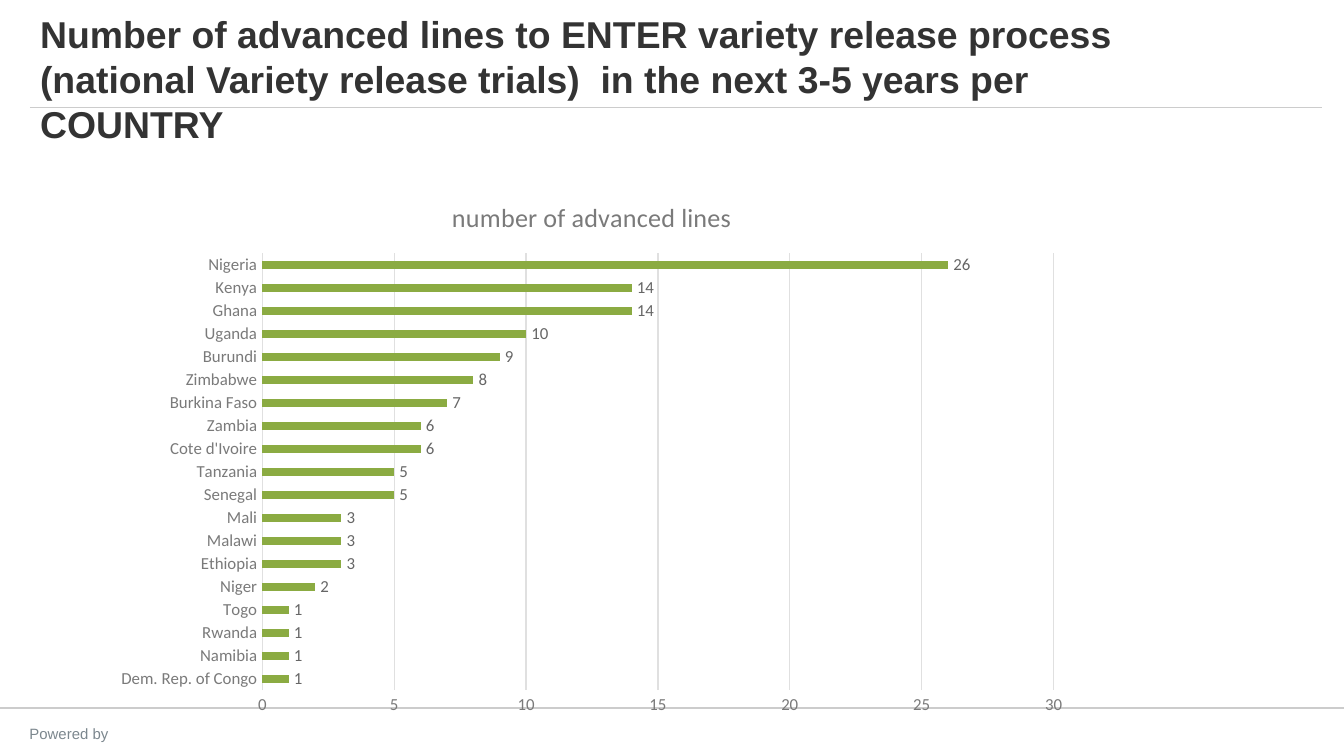
from lxml.etree import SubElement
from pptx import Presentation
from pptx.chart.data import CategoryChartData as Data
from pptx.dml.color import RGBColor
from pptx.enum.chart import XL_CHART_TYPE as Kind
from pptx.enum.chart import XL_LABEL_POSITION as Spot
from pptx.enum.chart import XL_TICK_MARK as Tick
from pptx.enum.shapes import MSO_CONNECTOR as Link
from pptx.enum.text import MSO_ANCHOR as Anchor
from pptx.enum.text import PP_ALIGN as Align
from pptx.oxml.ns import qn
from pptx.util import Pt

INK = RGBColor(0x33, 0x33, 0x33)
GRAY = RGBColor(0x7A, 0x7A, 0x7A)
LABEL = RGBColor(0x66, 0x66, 0x66)
SLATE = RGBColor(0x7C, 0x87, 0x8E)
RULE = RGBColor(0xCC, 0xCC, 0xCC)
GRID = RGBColor(0xE0, 0xE0, 0xE0)
GREEN = RGBColor(0x8B, 0xAB, 0x42)

WIDE, HIGH = 720, 405
TITLE = ("Number of advanced lines to ENTER variety release process "
         "(national Variety release trials)  in the next 3-5 years per COUNTRY")
LINES = {
    "Dem. Rep. of Congo": 1, "Namibia": 1, "Rwanda": 1, "Togo": 1,
    "Niger": 2, "Ethiopia": 3, "Malawi": 3, "Mali": 3, "Senegal": 5,
    "Tanzania": 5, "Cote d'Ivoire": 6, "Zambia": 6, "Burkina Faso": 7,
    "Zimbabwe": 8, "Burundi": 9, "Uganda": 10, "Ghana": 14, "Kenya": 14,
    "Nigeria": 26,
}


def style(font, size, color, name="Calibri", bold=False):
    font.name, font.size, font.bold = name, Pt(size), bold
    font.color.rgb = color


def stroke(line, color, width):
    line.color.rgb = color
    line.width = Pt(width)


class Page:
    """Holds the current slide and its text style."""

    def __init__(self, slide, face="Arial"):
        self.slide = slide
        self.face = face

    def rule(self, left, right, y, width):
        line = self.slide.shapes.add_connector(
            Link.STRAIGHT, Pt(left), Pt(y), Pt(right), Pt(y))
        stroke(line.line, RULE, width)
        SubElement(line._element.spPr, qn("a:effectLst"))

    def text(self, text, box, size=20, color=INK, bold=False,
             align=Align.LEFT, anchor=Anchor.TOP, right=7.2):
        frame = self.slide.shapes.add_textbox(*map(Pt, box)).text_frame
        frame.word_wrap = True
        frame.vertical_anchor = anchor
        frame.margin_right = Pt(right)
        para = frame.paragraphs[0]
        para.alignment = align
        run = para.add_run()
        run.text = text
        style(run.font, size, color, self.face, bold)

    def bars(self, name, values, box, top, step):
        data = Data()
        data.categories = list(values)
        data.add_series(name, list(values.values()))
        chart = self.slide.shapes.add_chart(
            Kind.BAR_CLUSTERED, *map(Pt, box), data).chart
        style(chart.font, 10, INK)
        chart.has_legend = False
        chart.has_title = True
        head = chart.chart_title.text_frame
        head.text = name
        style(head.paragraphs[0].runs[0].font, 14, GRAY)

        cats, vals = chart.category_axis, chart.value_axis
        for axis in (cats, vals):
            axis.major_tick_mark = axis.minor_tick_mark = Tick.NONE
            style(axis.tick_labels.font, 9, GRAY)
        stroke(cats.format.line, GRID, 0.75)
        vals.format.line.fill.background()
        stroke(vals.major_gridlines.format.line, GRID, 0.75)
        vals.minimum_scale, vals.maximum_scale = 0, top
        vals.major_unit = step

        plot = chart.plots[0]
        plot.gap_width = 182
        plot.vary_by_categories = False
        fill = plot.series[0].format.fill
        fill.solid()
        fill.fore_color.rgb = GREEN
        plot.has_data_labels = True
        labels = plot.data_labels
        labels.show_value = True
        labels.position = Spot.OUTSIDE_END
        style(labels.font, 9, LABEL)


def main():
    deck = Presentation()
    deck.slide_width, deck.slide_height = Pt(WIDE), Pt(HIGH)
    page = Page(deck.slides.add_slide(deck.slide_layouts[6]))
    page.rule(0, WIDE, 379.5, 1)
    page.rule(16, 708, 57.5, 0.5)
    page.text("Powered by", (-4.5, 384.5, 83, 13), size=8, color=SLATE,
              align=Align.CENTER)
    page.text(TITLE, (14.4, 21.6, 648, 60), bold=True,
              anchor=Anchor.BOTTOM, right=14)
    page.bars("number of advanced lines", LINES, (54.5, 94.5, 525, 294.5),
              top=30, step=5)
    deck.save("out.pptx")


if __name__ == "__main__":
    main()
